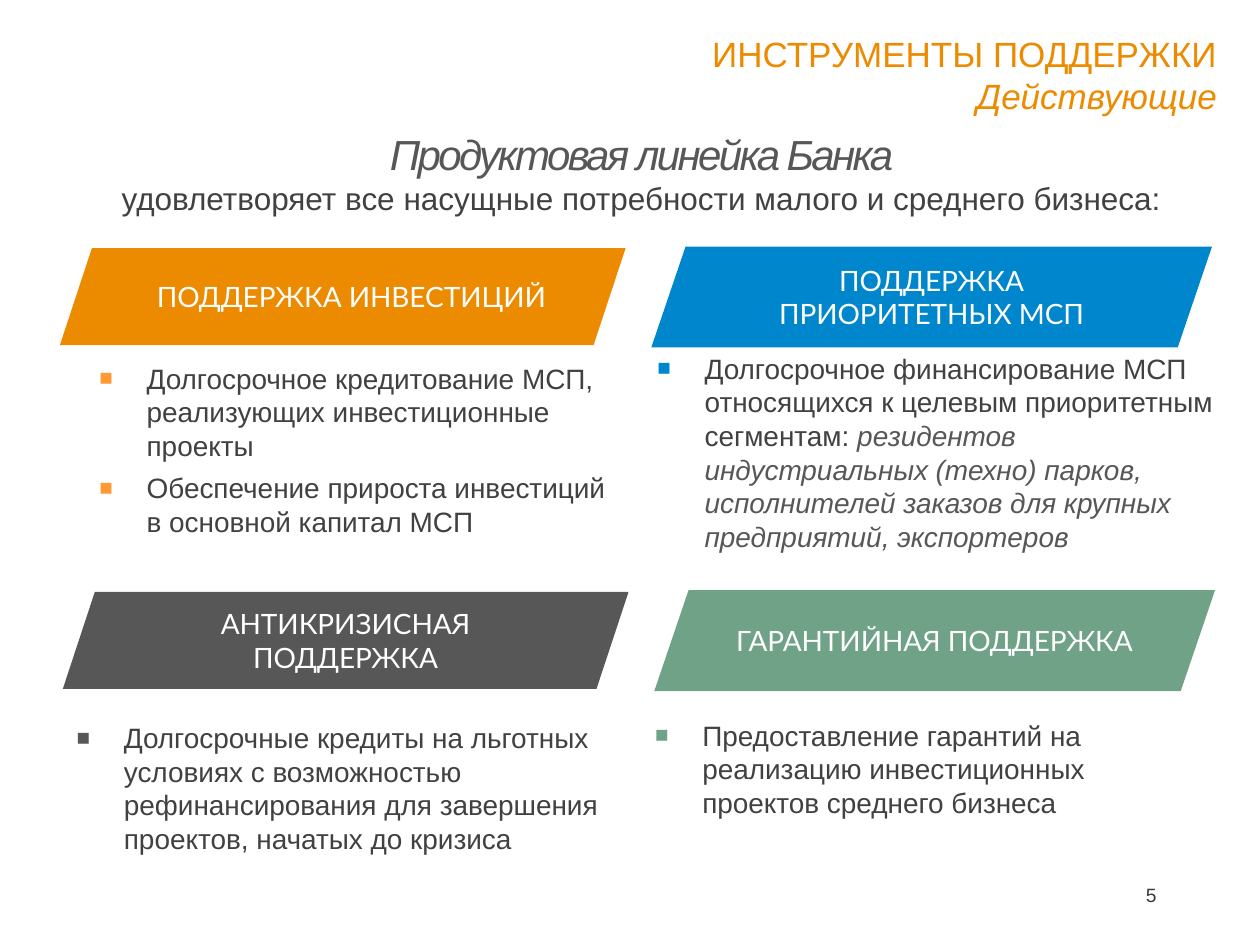
"""Build the slide on the bank's product line for small and medium business."""
from lxml import etree
from pptx import Presentation
from pptx.dml.color import RGBColor
from pptx.enum.shapes import MSO_SHAPE
from pptx.enum.text import MSO_ANCHOR, MSO_AUTO_SIZE, PP_ALIGN
from pptx.oxml.ns import qn
from pptx.util import Pt

PARALLELOGRAM = MSO_SHAPE.PARALLELOGRAM
TOP, MIDDLE = MSO_ANCHOR.TOP, MSO_ANCHOR.MIDDLE
LEFT, CENTER, RIGHT = PP_ALIGN.LEFT, PP_ALIGN.CENTER, PP_ALIGN.RIGHT
FIXED = MSO_AUTO_SIZE.NONE

COLORS = {
    "orange": "ED8B00", "blue": "0086CD", "gray": "575757", "green": "6FA287",
    "bullet_orange": "FF9933", "body": "414141", "number": "3A3A3A", "white": "FFFFFF",
}
FORMATS = {
    "title": {"size": Pt(20), "name": "Arial", "bold": False, "italic": False, "color": "orange"},
    "subtitle": {"size": Pt(20), "name": "Arial", "bold": False, "italic": True, "color": "orange"},
    "lead": {"size": Pt(24), "name": "Arial", "italic": True, "color": "gray"},
    "claim": {"size": Pt(18), "name": "Arial", "color": "body"},
    "body": {"size": Pt(16), "name": "Arial", "color": "body"},
    "segments": {"size": Pt(16), "name": "Arial", "italic": True, "color": "gray"},
    "banner": {"size": Pt(16), "name": "Lato", "color": "white"},
    "number": {"size": Pt(11), "name": "Arial", "color": "number"},
}
TITLE = [("ИНСТРУМЕНТЫ ПОДДЕРЖКИ", "title"), ("Действующие", "subtitle")]
INTRO = [
    [("Продуктовая линейка Банка", "lead")],
    [("удовлетворяет все насущные потребности малого и среднего бизнеса:", "claim")],
]
PRODUCTS = [
    {
        "banner": "ПОДДЕРЖКА ИНВЕСТИЦИЙ", "fill": "orange", "bullet": "bullet_orange",
        "column": 0, "row": 0, "shift": 10, "box": (49.7, 203, 311, 109),
        "points": [
            [("Долгосрочное кредитование МСП, реализующих инвестиционные проекты", "body")],
            [("Обеспечение прироста инвестиций в основной капитал МСП", "body")],
        ],
    },
    {
        "banner": "ПОДДЕРЖКА ПРИОРИТЕТНЫХ МСП", "fill": "blue", "bullet": "blue",
        "column": 1, "row": 0, "shift": 0, "box": (368.6, 197.3, 348.5, 124),
        "points": [[
            ("Долгосрочное финансирование МСП относящихся к целевым приоритетным сегментам: ", "body"),
            ("резидентов индустриальных (техно) парков, исполнителей заказов для крупных "
             "предприятий, экспортеров", "segments"),
        ]],
    },
    {
        "banner": "АНТИКРИЗИСНАЯ ПОДДЕРЖКА", "fill": "gray", "bullet": "gray",
        "column": 0, "row": 1, "shift": 0, "box": (36.7, 408.2, 325.4, 94.3),
        "points": [[("Долгосрочные кредиты на льготных условиях с возможностью рефинансирования "
                     "для завершения проектов, начатых до кризиса", "body")]],
    },
    {
        "banner": "ГАРАНТИЙНАЯ ПОДДЕРЖКА", "fill": "green", "bullet": "green",
        "column": 1, "row": 1, "shift": 0, "box": (367.2, 406.8, 325.4, 75),
        "points": [[("Предоставление гарантий на реализацию инвестиционных проектов "
                     "среднего бизнеса", "body")]],
    },
]
BANNER_COLUMNS = [
    {"left": 34.2, "top": 141.8, "width": 323.3, "height": 55.5, "slant": 0.33},
    {"left": 372.2, "top": 140.9, "width": 320.4, "height": 57.6, "slant": 0.34},
]
ROW_STEP = (1.7, 196.4)
INDENT = 27
POINT_GAP = 5


def rgb(color):
    return RGBColor.from_string(COLORS[color])


def add_run(paragraph, text, style):
    run = paragraph.add_run()
    run.text = text
    for key, value in FORMATS[style].items():
        if key == "color":
            run.font.color.rgb = rgb(value)
        else:
            setattr(run.font, key, value)
    return run


def set_frame(frame, anchor):
    for key, value in {"word_wrap": True, "auto_size": FIXED, "vertical_anchor": anchor}.items():
        setattr(frame, key, value)


def add_text(slide, box, paragraphs, align=LEFT, anchor=TOP):
    frame = slide.shapes.add_textbox(*map(Pt, box)).text_frame
    set_frame(frame, anchor)
    for index, runs in enumerate(paragraphs):
        paragraph = frame.add_paragraph() if index else frame.paragraphs[0]
        paragraph.alignment = align
        for text, style in runs:
            add_run(paragraph, text, style)
    return frame


def add_bullet(paragraph, color):
    properties = paragraph._p.get_or_add_pPr()
    properties.set("marL", str(Pt(INDENT)))
    properties.set("indent", str(-Pt(INDENT)))
    bullet_color = etree.SubElement(properties, qn("a:buClr"))
    etree.SubElement(bullet_color, qn("a:srgbClr"), val=COLORS[color])
    etree.SubElement(properties, qn("a:buSzPct"), val="80000")
    etree.SubElement(properties, qn("a:buFont"), typeface="Arial")
    etree.SubElement(properties, qn("a:buChar"), char="■")


def add_title(slide):
    title = slide.shapes.title
    for key, value in {"left": 44.6, "top": 15.1, "width": 658, "height": 62.6}.items():
        setattr(title, key, Pt(value))
    set_frame(title.text_frame, TOP)
    paragraph = title.text_frame.paragraphs[0]
    paragraph.alignment = RIGHT
    for index, (text, style) in enumerate(TITLE):
        if index:
            paragraph.add_line_break()
        add_run(paragraph, text, style)


def add_banner(slide, product):
    column, row = BANNER_COLUMNS[product["column"]], product["row"]
    banner = slide.shapes.add_shape(
        PARALLELOGRAM, Pt(column["left"] + row * ROW_STEP[0]),
        Pt(column["top"] + row * ROW_STEP[1]), Pt(column["width"]), Pt(column["height"]))
    banner.adjustments[0] = column["slant"]
    banner.shadow.inherit = False
    banner.fill.solid()
    banner.fill.fore_color.rgb = rgb(product["fill"])
    banner.line.fill.background()
    set_frame(banner.text_frame, MIDDLE)
    banner.text_frame.margin_left = Pt(7.2 + product["shift"])
    paragraph = banner.text_frame.paragraphs[0]
    paragraph.alignment = CENTER
    add_run(paragraph, product["banner"], "banner")


def add_product(slide, product):
    add_banner(slide, product)
    frame = add_text(slide, product["box"], product["points"])
    for index, paragraph in enumerate(frame.paragraphs):
        if index:
            paragraph.space_before = Pt(POINT_GAP)
        add_bullet(paragraph, product["bullet"])


def main():
    deck = Presentation()
    deck.slide_width, deck.slide_height = Pt(720), Pt(540)
    slide = deck.slides.add_slide(deck.slide_layouts[5])
    add_title(slide)
    intro = add_text(slide, (23, 69.8, 687, 58.3), INTRO, CENTER)
    intro.paragraphs[0].runs[0].font._element.set("spc", "-150")
    for product in PRODUCTS:
        add_product(slide, product)
    add_text(slide, (605.5, 502.6, 62.6, 17.3), [[("5", "number")]], RIGHT, MIDDLE)
    deck.save("out.pptx")


if __name__ == "__main__":
    main()
